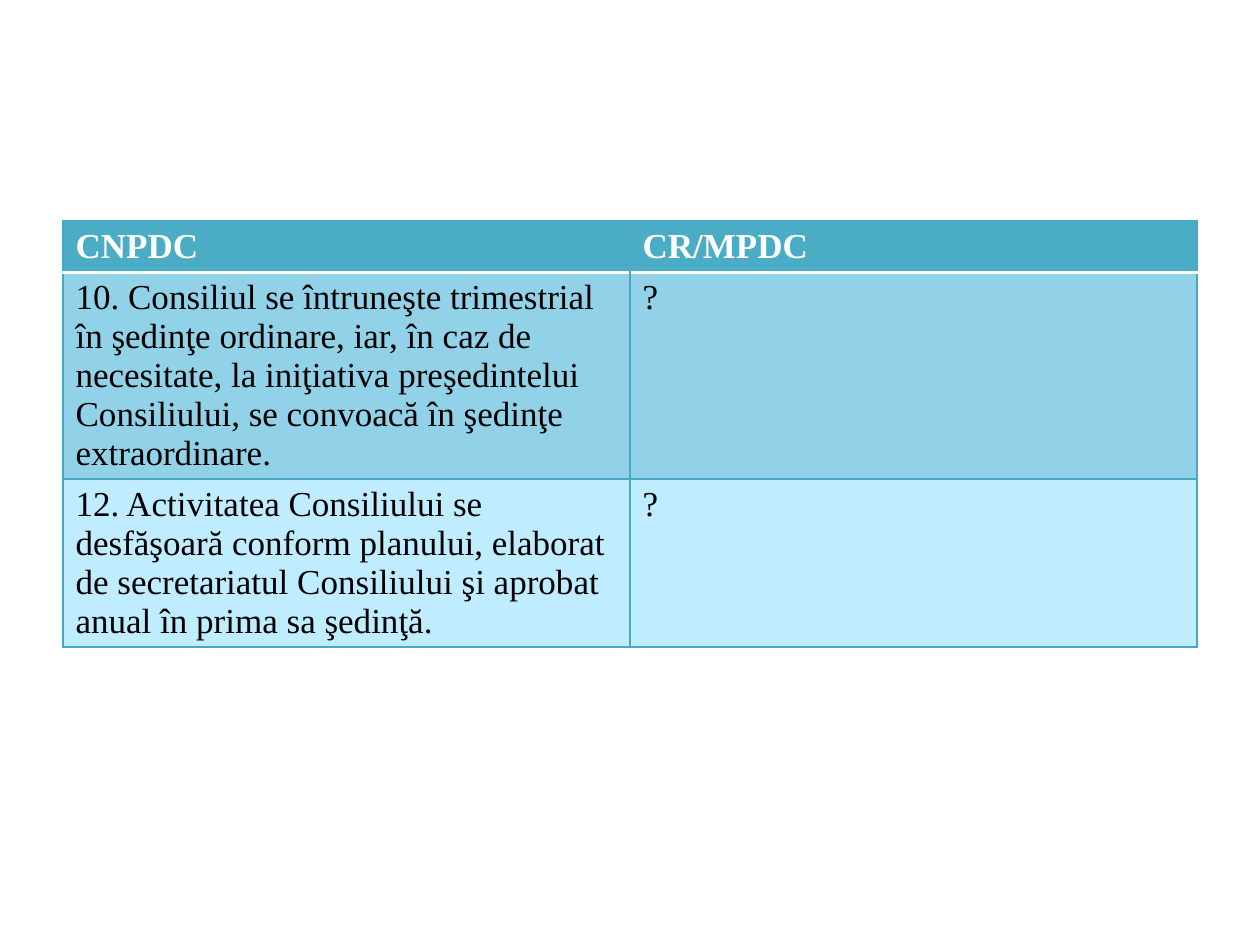
import dataclasses

import pptx
import pptx.dml.color
import pptx.oxml
import pptx.oxml.ns
import pptx.util


@dataclasses.dataclass(frozen=True)
class Theme:
    """Colours, font and sizes of the slide."""
    font: str = "Times New Roman"
    text_size: float = 20
    header_fill: str = "4BACC6"
    header_text: str = "FFFFFF"
    body_fills: tuple = ("91D2E8", "BFECFF")
    body_text: str = "000000"
    grid: tuple = ("46AAC5", 0.75)
    header_rule: tuple = ("FFFFFF", 2)


THEME = Theme()
ROWS = (
    ("CNPDC", "CR/MPDC"),
    ("10. Consiliul se întruneşte trimestrial în şedinţe ordinare, iar, în caz de "
     "necesitate, la iniţiativa preşedintelui Consiliului, se convoacă în şedinţe "
     "extraordinare.", "?"),
    ("12. Activitatea Consiliului se desfăşoară conform planului, elaborat de "
     "secretariatul Consiliului şi aprobat anual în prima sa şedinţă.", "?"),
)


def rgb(code):
    """Return a colour object for a hex code."""
    return pptx.dml.color.RGBColor.from_string(code)


def add_border(cell, side, line):
    """Draw one side of a cell, or hide it when line is None."""
    if line:
        color, points = line
        width = pptx.util.Pt(points)
        paint = f'<a:solidFill><a:srgbClr val="{color}"/></a:solidFill>'
    else:
        width, paint = 0, "<a:noFill/>"
    namespace = pptx.oxml.ns.nsdecls("a")
    border = pptx.oxml.parse_xml(f'<a:ln{side} {namespace} w="{width}">{paint}</a:ln{side}>')
    cell._tc.get_or_add_tcPr().append(border)


def cell_borders(row, column):
    """Return the line for each side of the cell at a grid position."""
    borders = dict.fromkeys("LRTB", THEME.grid)
    if row == 0:
        borders["R" if column == 0 else "L"] = None
        borders["B"] = THEME.header_rule
    elif row == 1:
        borders["T"] = THEME.header_rule
    return borders


def fill_cell(cell, text, row, column):
    """Write and style one table cell."""
    is_header = row == 0
    for side, line in cell_borders(row, column).items():
        add_border(cell, side, line)
    cell.fill.solid()
    fill = THEME.header_fill if is_header else THEME.body_fills[row - 1]
    cell.fill.fore_color.rgb = rgb(fill)
    cell.text = text
    font = cell.text_frame.paragraphs[0].font
    font.name = THEME.font
    font.size = pptx.util.Pt(THEME.text_size)
    font.bold = is_header
    font.color.rgb = rgb(THEME.header_text if is_header else THEME.body_text)


def add_comparison_table(page, left, top, width, height, row_height):
    """Add the two-column table of council rules."""
    frame = page.shapes.add_table(len(ROWS), len(ROWS[0]), left, top, width, height)
    for row, texts in enumerate(ROWS):
        frame.table.rows[row].height = row_height
        for column, text in enumerate(texts):
            fill_cell(frame.table.cell(row, column), text, row, column)
    frame.height = height


def main():
    """Build and save the slide."""
    deck = pptx.Presentation()
    deck.slide_width = pptx.util.Inches(10)
    deck.slide_height = pptx.util.Inches(7.5)
    page = deck.slides.add_slide(deck.slide_layouts[6])
    margin = deck.slide_width // 20
    add_comparison_table(
        page, margin, pptx.util.Inches(1.75), deck.slide_width - 2 * margin,
        pptx.util.Inches(3.63), pptx.util.Inches(0.41))
    deck.save("out.pptx")


if __name__ == "__main__":
    main()
